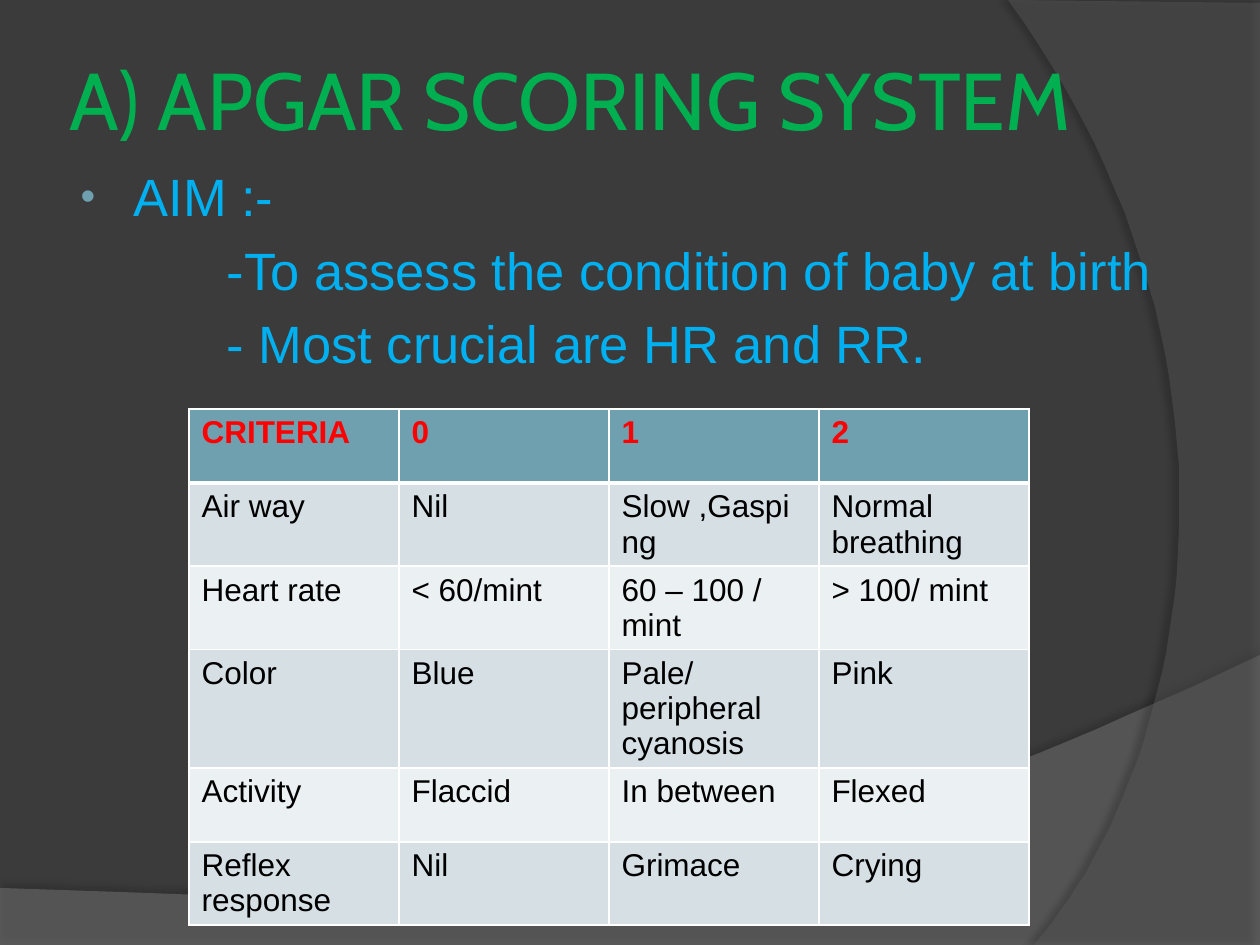
from dataclasses import dataclass
from typing import Optional

from lxml.etree import SubElement
from pptx import Presentation
from pptx.dml.color import RGBColor
from pptx.enum.text import MSO_ANCHOR as Anchor, PP_ALIGN as Align
from pptx.oxml import parse_xml
from pptx.oxml.ns import nsdecls, qn
from pptx.util import Emu, Pt

SCALE = 914400 / 126
BACKGROUND = RGBColor(0x3B, 0x3B, 0x3B)
BLACK = RGBColor(0, 0, 0)
WHITE = RGBColor(0xFF, 0xFF, 0xFF)
RED = RGBColor(0xFF, 0, 0)
GREEN = RGBColor(0, 0xB0, 0x50)
BLUE = RGBColor(0, 0xB0, 0xF0)
TEAL = RGBColor(0x6E, 0xA0, 0xB0)
BANDS = (RGBColor(0xD5, 0xDF, 0xE4), RGBColor(0xEB, 0xF0, 0xF2))
LIGHT_GRAY = RGBColor(0x7F, 0x7F, 0x7F)
DARK_GRAY = RGBColor(0x5E, 0x5E, 0x5E)

Point = tuple[float, float]


@dataclass(frozen=True)
class Swoosh:
    corners: list[Point]
    curve: tuple[Point, Point, Point]
    color: RGBColor
    opacity: int
    shadow_opacity: int
    shadow_distance: float
    shadow_angle: int


@dataclass(frozen=True)
class Line:
    text: str
    margin: int
    indent: int = 0
    bullet: Optional[str] = None


SWOOSHES = [
    Swoosh([(0, 888), (0, 945), (1260, 945), (1260, 655)],
           ((704, 919), (493, 906), (0, 888)), LIGHT_GRAY, 45, 35, 3.5, 270),
    Swoosh([(1008, 0), (1260, 3), (1260, 945), (1034, 945)],
           ((1178, 780), (1283, 378), (1008, 0)), DARK_GRAY, 40, 45, 4, 180),
]

LINES = [
    Line("AIM :-", 58, -53, "•"),
    Line("-To assess the condition of baby at birth", 151),
    Line("- Most crucial are HR and RR.", 151),
]

ROWS = [
    ("CRITERIA", "0", "1", "2"),
    ("Air way", "Nil", "Slow ,Gasping", "Normal breathing"),
    ("Heart rate", "< 60/mint", "60 – 100 / mint", "> 100/ mint"),
    ("Color", "Blue", "Pale/peripheral cyanosis", "Pink"),
    ("Activity", "Flaccid", "In between", "Flexed"),
    ("Reflex response", "Nil", "Grimace", "Crying"),
]


def px(n: float) -> Emu:
    return Emu(round(n * SCALE))


def place(sp, left: int, top: int, width: int, height: int) -> None:
    sp.left, sp.top, sp.width, sp.height = map(px, (left, top, width, height))


def write(p, text: str, *, size: int, color: RGBColor,
          font: str = "Arial", bold: bool = False) -> None:
    r = p.add_run()
    r.text = text
    r.font.size = Pt(size)
    r.font.name = font
    r.font.bold = bold
    r.font.color.rgb = color


def bezier(start: Point, curve: tuple[Point, Point, Point], steps: int = 48) -> list[Point]:
    nodes = (start, *curve)
    points = []
    for i in range(1, steps + 1):
        t = i / steps
        weights = ((1 - t) ** 3, 3 * t * (1 - t) ** 2, 3 * t * t * (1 - t), t ** 3)
        points.append(tuple(sum(w * n[axis] for w, n in zip(weights, nodes)) for axis in (0, 1)))
    return points


def add_swoosh(s, swoosh: Swoosh, position: int) -> None:
    first, *rest = swoosh.corners
    builder = s.shapes.build_freeform(*first, scale=SCALE)
    builder.add_line_segments(rest + bezier(rest[-1], swoosh.curve), close=True)
    sp = builder.convert_to_shape()
    sp.fill.solid()
    sp.fill.fore_color.rgb = swoosh.color
    sp.line.fill.background()
    pr = sp._element.spPr
    SubElement(pr.find(".//" + qn("a:srgbClr")), qn("a:alpha"), val=str(swoosh.opacity * 1000))
    pr.append(parse_xml(
        f'<a:effectLst {nsdecls("a")}><a:outerShdw blurRad="{Pt(4)}" '
        f'dist="{Pt(swoosh.shadow_distance)}" dir="{swoosh.shadow_angle * 60000}" '
        f'rotWithShape="0"><a:srgbClr val="000000">'
        f'<a:alpha val="{swoosh.shadow_opacity * 1000}"/></a:srgbClr></a:outerShdw></a:effectLst>'))
    s.shapes._spTree.insert(position, sp._element)


def add_line(p, line: Line) -> None:
    pr = p._p.get_or_add_pPr()
    pr.set("marL", str(px(line.margin)))
    pr.set("indent", str(px(line.indent)))
    if line.bullet:
        color = SubElement(pr, qn("a:buClr"))
        SubElement(color, qn("a:srgbClr"), val=str(TEAL))
        SubElement(pr, qn("a:buSzPct"), val="80000")
        SubElement(pr, qn("a:buFont"), typeface="Arial")
        SubElement(pr, qn("a:buChar"), char=line.bullet)
    else:
        SubElement(pr, qn("a:buNone"))
    write(p, line.text, size=30, color=BLUE)


def set_borders(cell, top: int, bottom: int) -> None:
    pr = cell._tc.get_or_add_tcPr()
    for i, (side, width) in enumerate({"L": 1, "R": 1, "T": top, "B": bottom}.items()):
        pr.insert(i, parse_xml(
            f'<a:ln{side} {nsdecls("a")} w="{Pt(width)}"><a:solidFill>'
            f'<a:srgbClr val="{WHITE}"/></a:solidFill></a:ln{side}>'))


def add_score_table(s) -> None:
    row_height = 74
    table = s.shapes.add_table(len(ROWS), len(ROWS[0]), px(189), px(409),
                               px(840), px(row_height * len(ROWS))).table
    for i, row in enumerate(ROWS):
        header = i == 0
        for j, text in enumerate(row):
            cell = table.cell(i, j)
            cell.fill.solid()
            cell.fill.fore_color.rgb = TEAL if header else BANDS[(i - 1) % 2]
            set_borders(cell, top=3 if i == 1 else 1, bottom=3 if header else 1)
            write(cell.text_frame.paragraphs[0], text, size=18,
                  color=RED if header else BLACK, bold=header)


def main() -> None:
    prs = Presentation()
    prs.slide_width, prs.slide_height = px(1260), px(945)
    s = prs.slides.add_slide(prs.slide_layouts[1])
    s.background.fill.solid()
    s.background.fill.fore_color.rgb = BACKGROUND
    for position, swoosh in enumerate(SWOOSHES, start=2):
        add_swoosh(s, swoosh, position)

    title, body = s.placeholders
    place(title, 63, 38, 1029, 120)
    tf = title.text_frame
    tf.vertical_anchor = Anchor.MIDDLE
    tf.margin_left = tf.margin_right = tf.margin_top = tf.margin_bottom = px(6)
    p = tf.paragraphs[0]
    p.alignment = Align.LEFT
    write(p, "A) APGAR SCORING SYSTEM", size=46, color=GREEN, font="Cabin")

    place(body, 63, 158, 1113, 756)
    tf = body.text_frame
    for i, line in enumerate(LINES):
        add_line(tf.add_paragraph() if i else tf.paragraphs[0], line)

    add_score_table(s)
    prs.save("out.pptx")


if __name__ == "__main__":
    main()
